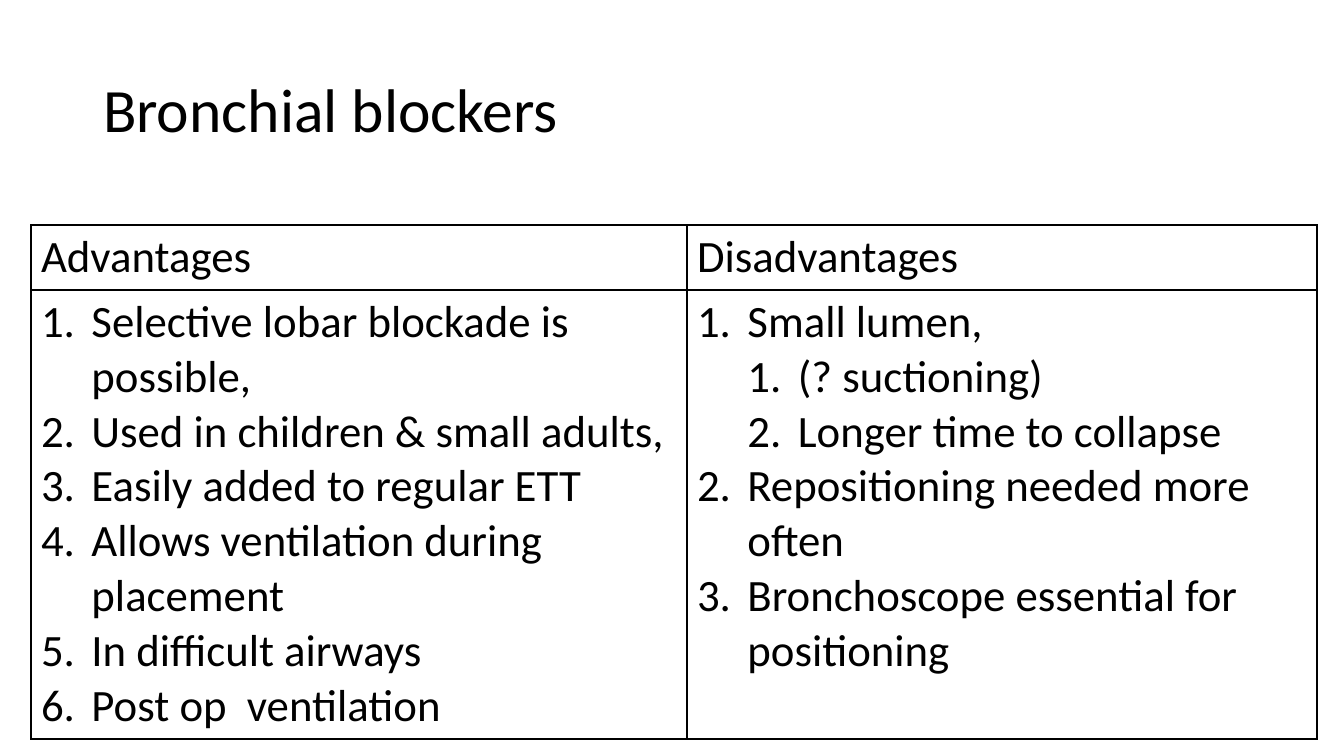
import lxml.etree
import pptx
import pptx.dml.color
import pptx.enum.text
import pptx.oxml
import pptx.oxml.ns
import pptx.util

COLOURS = {"text": "000000", "border": "000000"}
FONT = "Calibri"
HEADINGS = ["Advantages", "Disadvantages"]
ADVANTAGES = [
    (0, "Selective lobar blockade is possible,"),
    (0, "Used in children & small adults,"),
    (0, "Easily added to regular ETT"),
    (0, "Allows ventilation during placement"),
    (0, "In difficult airways"),
    (0, "Post op  ventilation"),
]
DISADVANTAGES = [
    (0, "Small lumen,"),
    (1, "(? suctioning)"),
    (1, "Longer time to collapse"),
    (0, "Repositioning needed more often"),
    (0, "Bronchoscope essential for positioning"),
]


def px(length):
    return pptx.util.Emu(round(length * 914400 / 100.8))


class SlideBuilder:
    """Hold the style and the current slide, and add its elements."""

    def __init__(self, presentation):
        self.slide = presentation.slides.add_slide(presentation.slide_layouts[5])

    def format_runs(self, paragraph, size):
        for run in paragraph.runs:
            run.font.name = FONT
            run.font.size = pptx.util.Pt(size)
            run.font.bold = False
            run.font.color.rgb = pptx.dml.color.RGBColor.from_string(COLOURS["text"])

    def title(self, text, left, top, width, height):
        shape = self.slide.shapes.title
        shape.left, shape.top = px(left), px(top)
        shape.width, shape.height = px(width), px(height)
        frame = shape.text_frame
        frame.text = text
        frame.word_wrap = True
        frame.vertical_anchor = pptx.enum.text.MSO_ANCHOR.MIDDLE
        paragraph = frame.paragraphs[0]
        paragraph.alignment = pptx.enum.text.PP_ALIGN.LEFT
        paragraph.line_spacing = 0.9
        self.format_runs(paragraph, 44)

    def table(self, left, top, widths, heights):
        frame = self.slide.shapes.add_table(
            len(heights), len(widths), px(left), px(top), px(sum(widths)), px(sum(heights))
        )
        table = frame.table
        table.first_row = False
        table.horz_banding = False
        for column, width in zip(table.columns, widths):
            column.width = px(width)
        for row, height in zip(table.rows, heights):
            row.height = px(height)
        for cell in table.iter_cells():
            self.borders(cell)
            cell.fill.background()
        return table

    def borders(self, cell):
        properties = cell._tc.get_or_add_tcPr()
        for side in "LRTB":
            properties.append(pptx.oxml.parse_xml(
                f'<a:ln{side} {pptx.oxml.ns.nsdecls("a")} w="12700"><a:solidFill>'
                f'<a:srgbClr val="{COLOURS["border"]}"/></a:solidFill></a:ln{side}>'
            ))

    def heading(self, cell, text):
        cell.text_frame.text = text
        self.format_runs(cell.text_frame.paragraphs[0], 32)

    def numbered_list(self, cell, items):
        frame = cell.text_frame
        frame.text = "\n".join(text for _, text in items)
        for paragraph, (level, _) in zip(frame.paragraphs, items):
            paragraph.level = level
            properties = paragraph._p.get_or_add_pPr()
            indent = pptx.util.Inches(0.5)
            properties.set("marL", str(indent * (level + 1)))
            properties.set("indent", str(-indent))
            number = lxml.etree.SubElement(properties, pptx.oxml.ns.qn("a:buAutoNum"))
            number.set("type", "arabicPeriod")
            self.format_runs(paragraph, 32)


def main():
    presentation = pptx.Presentation()
    presentation.slide_width, presentation.slide_height = px(1344), px(756)
    builder = SlideBuilder(presentation)
    builder.title("Bronchial blockers", 93, 40, 1159, 146)
    table = builder.table(31, 225, [656, 630], [65, 449])
    for index, (heading, items) in enumerate(zip(HEADINGS, [ADVANTAGES, DISADVANTAGES])):
        builder.heading(table.cell(0, index), heading)
        builder.numbered_list(table.cell(1, index), items)
    presentation.save("out.pptx")


if __name__ == "__main__":
    main()
